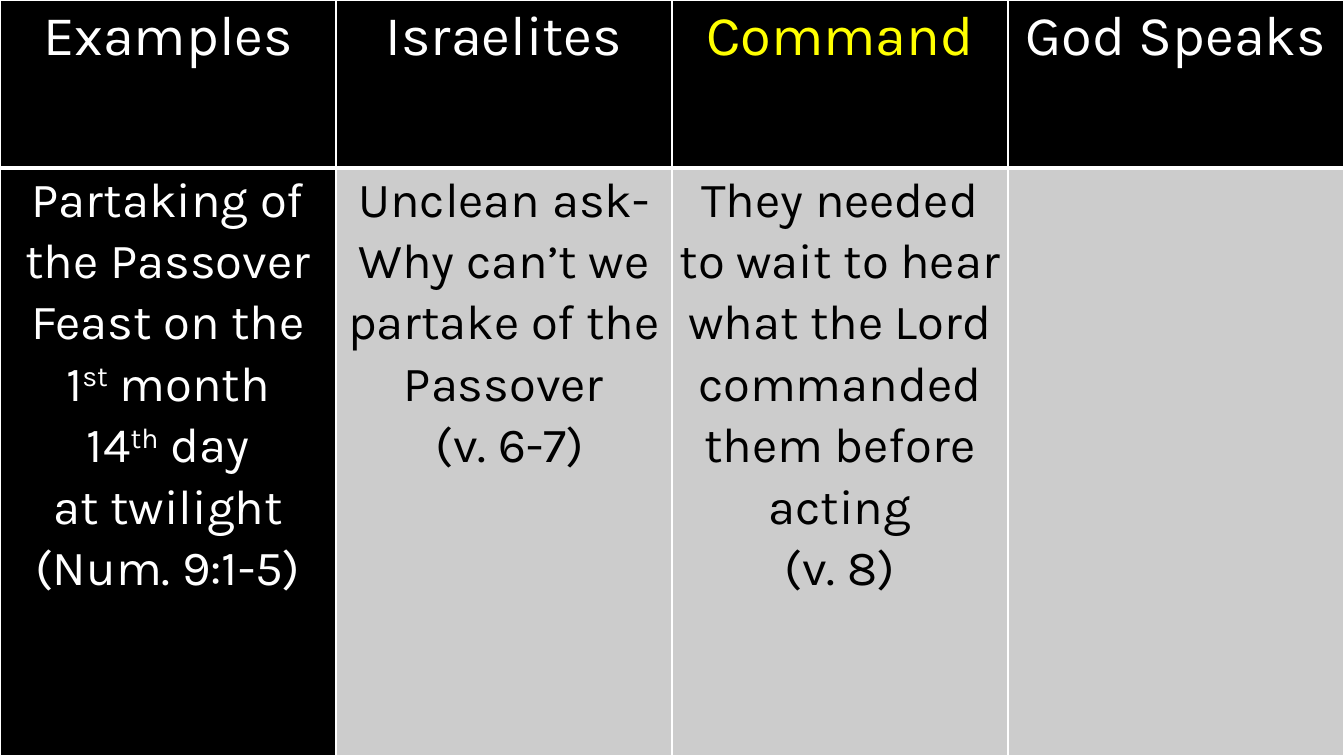
from lxml.etree import SubElement
from pptx import Presentation
from pptx.dml.color import RGBColor as RGB
from pptx.enum.text import PP_ALIGN as ALIGN
from pptx.oxml.ns import qn
from pptx.util import Inches, Pt

COLORS = {"black": "000000", "white": "FFFFFF", "yellow": "FFFF00", "gray": "CCCCCC"}
FONT = "Karla"
HEADER_SHARE = 2 / 9
HEADERS = ["Examples", "Israelites", "Command", "God Speaks"]
BODY = [
    ["Partaking of the Passover Feast on the 1^st^ month", "14^th^ day",
     "at twilight", "(Num. 9:1-5)"],
    ["Unclean ask- Why can’t we partake of the Passover", " (v. 6-7)"],
    ["They needed to wait to hear what the Lord commanded them before acting",
     "(v. 8)"],
    [],
]


def add_text(tf, paragraphs, size, color):
    """Write centred paragraphs, raising the parts between carets."""
    for i, text in enumerate(paragraphs):
        p = tf.add_paragraph() if i else tf.paragraphs[0]
        p.alignment = ALIGN.CENTER
        p.line_spacing = 1.07
        for j, part in enumerate(text.split("^")):
            r = p.add_run()
            r.text = part
            r.font.name = FONT
            r.font.size = Pt(size)
            r.font.bold = False
            r.font.color.rgb = RGB.from_string(COLORS[color])
            if j % 2:
                r.font._element.set("baseline", "30000")


def set_borders(cell, **widths):
    """Draw white cell borders with a width in points for each side."""
    tc_pr = cell._tc.get_or_add_tcPr()
    for side in "LRTB":
        ln = SubElement(tc_pr, qn(f"a:ln{side}"), w=str(Pt(widths.get(side, 1))))
        fill = SubElement(ln, qn("a:solidFill"))
        SubElement(fill, qn("a:srgbClr"), val=COLORS["white"])


def fill_cell(cell, paragraphs, size, color, fill, **borders):
    """Format one table cell and write its text."""
    cell.margin_left = cell.margin_right = Inches(0.07)
    cell.margin_top = cell.margin_bottom = 0
    set_borders(cell, **borders)
    cell.fill.solid()
    cell.fill.fore_color.rgb = RGB.from_string(COLORS[fill])
    add_text(cell.text_frame, paragraphs, size, color)


def add_grid(s, width, height):
    """Add the full-slide table with equal columns."""
    table = s.shapes.add_table(2, len(HEADERS), 0, 0, width, height).table
    table.first_row = table.horz_banding = False
    table.rows[0].height = int(height * HEADER_SHARE)
    table.rows[1].height = height - table.rows[0].height
    for col, (header, body) in enumerate(zip(HEADERS, BODY)):
        header_color = "yellow" if header == "Command" else "white"
        body_color, body_fill = ("black", "gray") if col else ("white", "black")
        fill_cell(table.cell(0, col), [header], 40, header_color, "black", B=3)
        fill_cell(table.cell(1, col), body, 35, body_color, body_fill, T=3)


def main():
    """Build the slide and save it."""
    prs = Presentation()
    prs.slide_width, prs.slide_height = Inches(13.33), Inches(7.5)
    s = prs.slides.add_slide(prs.slide_layouts[6])
    s.background.fill.solid()
    s.background.fill.fore_color.rgb = RGB.from_string(COLORS["black"])
    add_grid(s, prs.slide_width, prs.slide_height)
    prs.save("out.pptx")


if __name__ == "__main__":
    main()
